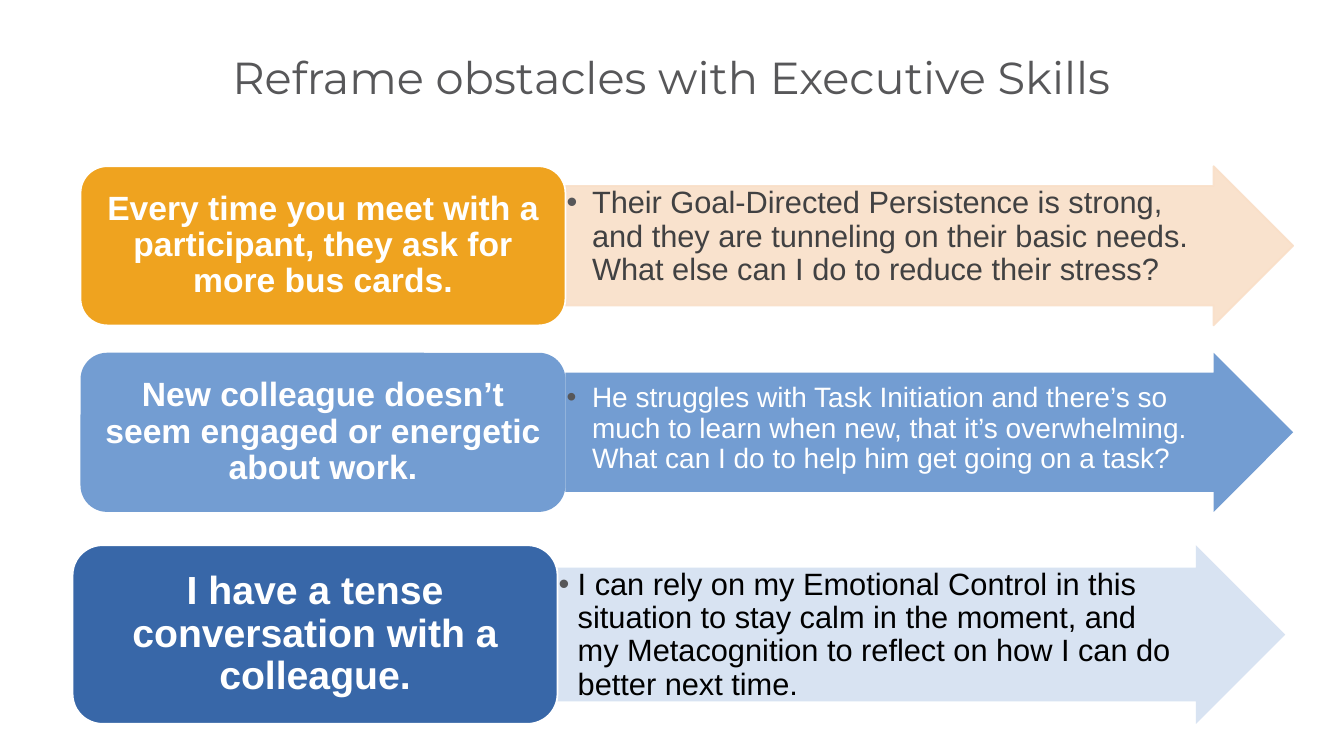
from dataclasses import dataclass

from pptx import Presentation
from pptx.dml.color import RGBColor
from pptx.enum.shapes import MSO_SHAPE
from pptx.enum.text import MSO_ANCHOR, PP_ALIGN
from pptx.oxml.ns import qn
from pptx.util import Cm, Pt
from lxml import etree

ROUNDED = MSO_SHAPE.ROUNDED_RECTANGLE
ARROW = MSO_SHAPE.RIGHT_ARROW
TOP, MIDDLE = MSO_ANCHOR.TOP, MSO_ANCHOR.MIDDLE
LEFT, CENTER = PP_ALIGN.LEFT, PP_ALIGN.CENTER
TITLE_ONLY = 5


@dataclass(frozen=True)
class Theme:
    title_font: str = "Montserrat"
    body_font: str = "Arial"
    title_size: int = 32
    label_size: int = 24
    label_large: int = 28
    answer_size: int = 22
    answer_small: int = 20
    grey: str = "575759"
    dark: str = "414142"
    black: str = "000000"
    white: str = "FFFFFF"
    orange: str = "EFA31F"
    peach: str = "F9DFC8"
    blue: str = "739DD2"
    navy: str = "3867A8"
    pale: str = "D4E0F1"
    line_width: float = 1.25
    spacing: float = 0.9


class SlideBuilder:
    def __init__(self, prs, theme):
        self.theme = theme
        self.s = prs.slides.add_slide(prs.slide_layouts[TITLE_ONLY])

    def run(self, p, text, font, size, color, bold=False):
        r = p.add_run()
        r.text = text
        r.font.name = font
        r.font.size = Pt(size)
        r.font.bold = bold
        r.font.color.rgb = RGBColor.from_string(color)

    def title(self, text, box):
        t = self.theme
        sp = self.s.shapes.title
        sp.left, sp.top, sp.width, sp.height = map(Cm, box)
        tf = sp.text_frame
        tf.word_wrap = True
        tf.vertical_anchor = MIDDLE
        p = tf.paragraphs[0]
        p.alignment = CENTER
        self.run(p, text, t.title_font, t.title_size, t.grey)

    def shape(self, kind, box, adjustments, fill, line, alpha, anchor, insets):
        sp = self.s.shapes.add_shape(kind, *map(Cm, box))
        sp.shadow.inherit = False
        for i, value in enumerate(adjustments):
            sp.adjustments[i] = value
        sp.fill.solid()
        sp.fill.fore_color.rgb = RGBColor.from_string(fill)
        if line:
            sp.line.color.rgb = RGBColor.from_string(line)
            sp.line.width = Pt(self.theme.line_width)
        else:
            sp.line.fill.background()
        if alpha < 100:
            for clr in sp._element.spPr.iter(qn("a:srgbClr")):
                etree.SubElement(clr, qn("a:alpha"), val=str(alpha * 1000))
        tf = sp.text_frame
        tf.word_wrap = True
        tf.vertical_anchor = anchor
        tf.margin_left, tf.margin_top, tf.margin_right, tf.margin_bottom = map(Cm, insets)
        return tf.paragraphs[0]

    def label(self, text, box, fill, line, size):
        t = self.theme
        p = self.shape(ROUNDED, box, [0.167], fill, line, 100, MIDDLE,
                       (0.25, 0.13, 0.25, 0.13))
        p.alignment = CENTER
        p.line_spacing = t.spacing
        self.run(p, text, t.body_font, size, t.white, True)

    def answer(self, text, box, fill, line, alpha, size, color, indent, top, right):
        t = self.theme
        p = self.shape(ARROW, box, [0.75, 0.5], fill, line, alpha, TOP,
                       (0.03, top, right, 0.03))
        self.bullet(p, indent)
        p.alignment = LEFT
        p.line_spacing = t.spacing
        self.run(p, text, t.body_font, size, color)

    def bullet(self, p, indent):
        pPr = p._p.get_or_add_pPr()
        pPr.set("marL", str(Cm(indent)))
        pPr.set("indent", str(-Cm(indent)))
        clr = etree.SubElement(pPr, qn("a:buClr"))
        etree.SubElement(clr, qn("a:srgbClr"), val=self.theme.grey)
        etree.SubElement(pPr, qn("a:buFont"), typeface=self.theme.body_font)
        etree.SubElement(pPr, qn("a:buChar"), char="•")


def main():
    prs = Presentation()
    prs.slide_width, prs.slide_height = Cm(33.87), Cm(19.05)
    t = Theme()
    slide = SlideBuilder(prs, t)
    slide.title("Reframe obstacles with Executive Skills", (4.01, 1.12, 25.83, 1.63))

    label_width, arrow_width = 12.22, 18.34
    rows = [
        ((2.03, 4.19, 4.01),
         ("Every time you meet with a participant, they ask for more bus cards.",
          t.orange, t.white, t.label_size),
         ("Their Goal-Directed Persistence is strong, and they are tunneling on their "
          "basic needs. What else can I do to reduce their stress?",
          t.peach, t.peach, 90, t.answer_size, t.dark, 0.64, 0.03, 1.04)),
        ((2.03, 8.89, 4.01),
         ("New colleague doesn’t seem engaged or energetic about work.",
          t.blue, None, t.label_size),
         ("He struggles with Task Initiation and there’s so much to learn when new, "
          "that it’s overwhelming. What can I do to help him get going on a task?",
          t.blue, None, 100, t.answer_small, t.white, 0.64, 0.28, 1.04)),
        ((1.83, 13.74, 4.5),
         ("I have a tense conversation with a colleague.",
          t.navy, t.white, t.label_large),
         ("I can rely on my Emotional Control in this situation to stay calm in the "
          "moment, and my Metacognition to reflect on how I can do better next time.",
          t.pale, None, 90, t.answer_size, t.black, 0.48, 0.03, 1.17)),
    ]
    for (left, top, height), label, answer in rows:
        text, *style = answer
        slide.answer(text, (left + label_width, top, arrow_width, height), *style)
        text, *style = label
        slide.label(text, (left, top, label_width, height), *style)

    prs.save("out.pptx")


if __name__ == "__main__":
    main()
